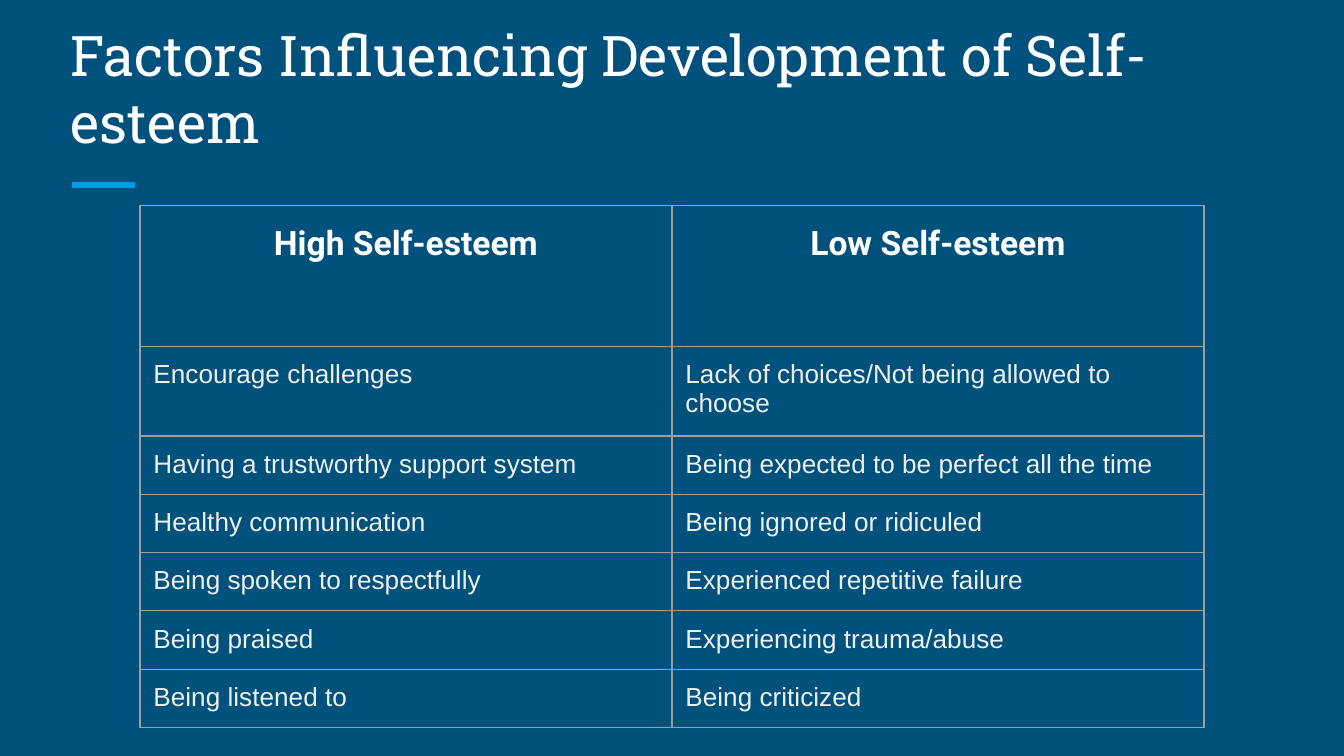
from pptx import Presentation
from pptx.dml.color import RGBColor
from pptx.enum.shapes import MSO_CONNECTOR
from pptx.enum.text import MSO_ANCHOR, PP_ALIGN
from pptx.oxml import parse_xml
from pptx.oxml.ns import nsdecls
from pptx.util import Pt
from lxml import etree

LINE = MSO_CONNECTOR.STRAIGHT
BOTTOM = MSO_ANCHOR.BOTTOM
CENTER = PP_ALIGN.CENTER
COLORS = {
    "back": "00517C",
    "accent": "039BE5",
    "title": "FFFFFF",
    "body": "EFEFEF",
    "grid": "9E9E9E",
}
INSET = Pt(7.2)


def style(para, font, size, color, bold=False):
    for run in para.runs:
        run.font.name = font
        run.font.size = Pt(size)
        run.font.bold = bold
        run.font.color.rgb = RGBColor.from_string(COLORS[color])


def pad(item):
    item.margin_left = item.margin_right = INSET
    item.margin_top = item.margin_bottom = INSET


prs = Presentation()
prs.slide_width = Pt(720)
prs.slide_height = Pt(405)
slide = prs.slides.add_slide(prs.slide_layouts[6])
slide.background.fill.solid()
slide.background.fill.fore_color.rgb = RGBColor.from_string(COLORS["back"])

rule = slide.shapes.add_connector(LINE, Pt(38.6), Pt(99), Pt(72.3), Pt(99))
rule.line.color.rgb = RGBColor.from_string(COLORS["accent"])
rule.line.width = Pt(3)
props = rule.line._get_or_add_ln().getparent()
props.append(parse_xml(f"<a:effectLst {nsdecls('a')}/>"))

title = slide.shapes.add_textbox(Pt(30.6), Pt(36), Pt(658.8), Pt(54))
frame = title.text_frame
frame.word_wrap = True
frame.vertical_anchor = BOTTOM
pad(frame)
frame.text = "Factors Influencing Development of Self-esteem"
style(frame.paragraphs[0], "Roboto Slab", 30, "title")

rows = [
    ("High Self-esteem", "Low Self-esteem"),
    ("Encourage challenges", "Lack of choices/Not being allowed to choose"),
    ("Having a trustworthy support system",
     "Being expected to be perfect all the time"),
    ("Healthy communication", "Being ignored or ridiculed"),
    ("Being spoken to respectfully", "Experienced repetitive failure"),
    ("Being praised", "Experiencing trauma/abuse"),
    ("Being listened to", "Being criticized"),
]
highs = [75.5, 46] + [30.1] * 5
grid = slide.shapes.add_table(
    len(rows), 2, Pt(75), Pt(110), Pt(570), Pt(sum(highs))
).table
grid.first_row = False
grid.horz_banding = False
for col in grid.columns:
    col.width = Pt(285)

for r, texts in enumerate(rows):
    grid.rows[r].height = Pt(highs[r])
    for c, text in enumerate(texts):
        cell = grid.cell(r, c)
        pad(cell)
        cell.text_frame.text = text
        para = cell.text_frame.paragraphs[0]
        if r == 0:
            para.alignment = CENTER
            para.line_spacing = 1.15
            para.space_after = Pt(16)
            style(para, "Roboto", 18, "title", True)
        else:
            style(para, "Arial", 14, "body")
        props = cell._tc.get_or_add_tcPr()
        for side in ("lnL", "lnR", "lnT", "lnB"):
            edge = parse_xml(f'<a:{side} {nsdecls("a")} w="{Pt(0.75)}"/>')
            fill = etree.SubElement(edge, f"{{{edge.nsmap['a']}}}solidFill")
            tone = etree.SubElement(fill, f"{{{edge.nsmap['a']}}}srgbClr")
            tone.set("val", COLORS["grid"])
            props.append(edge)
        cell.fill.background()

prs.save("out.pptx")
